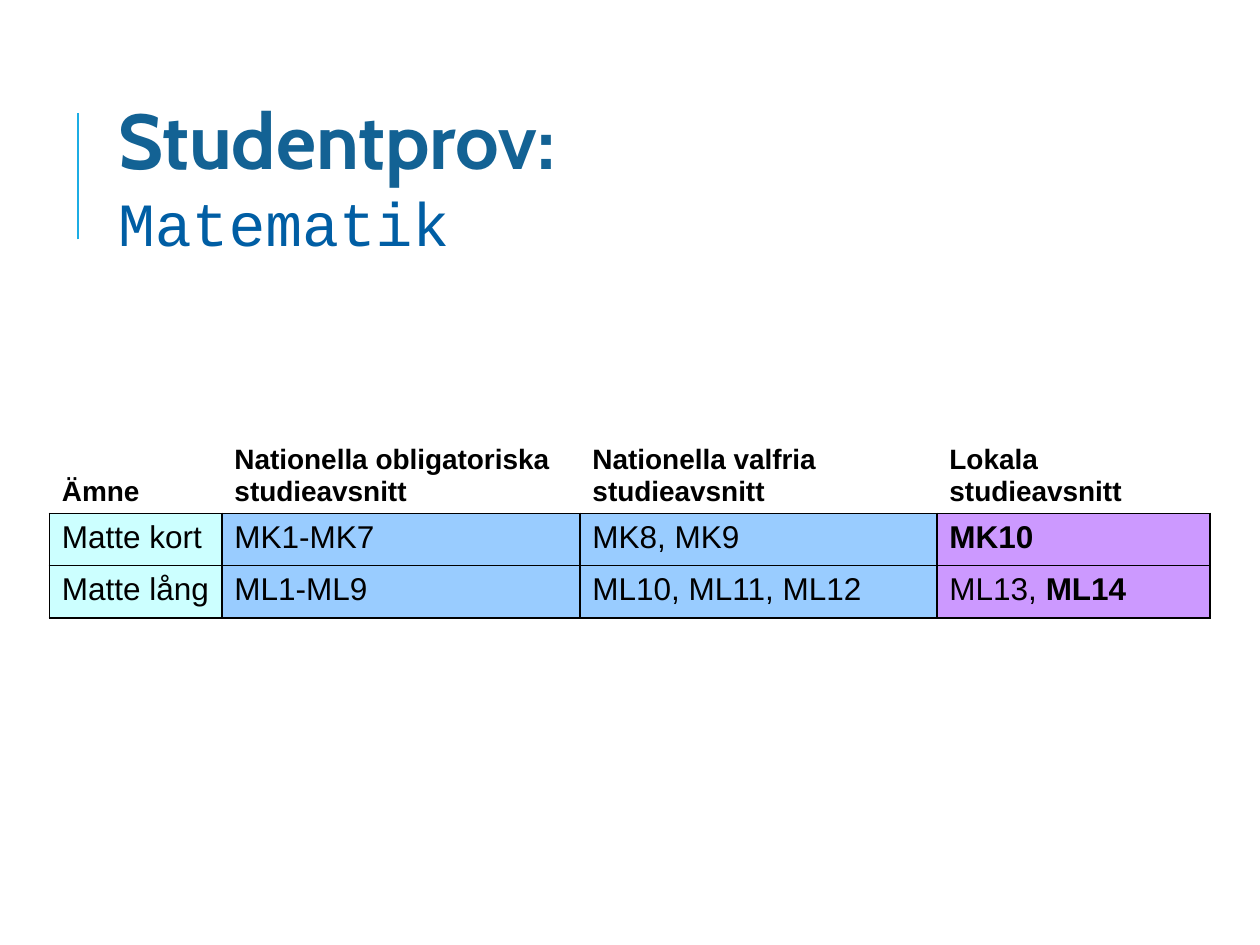
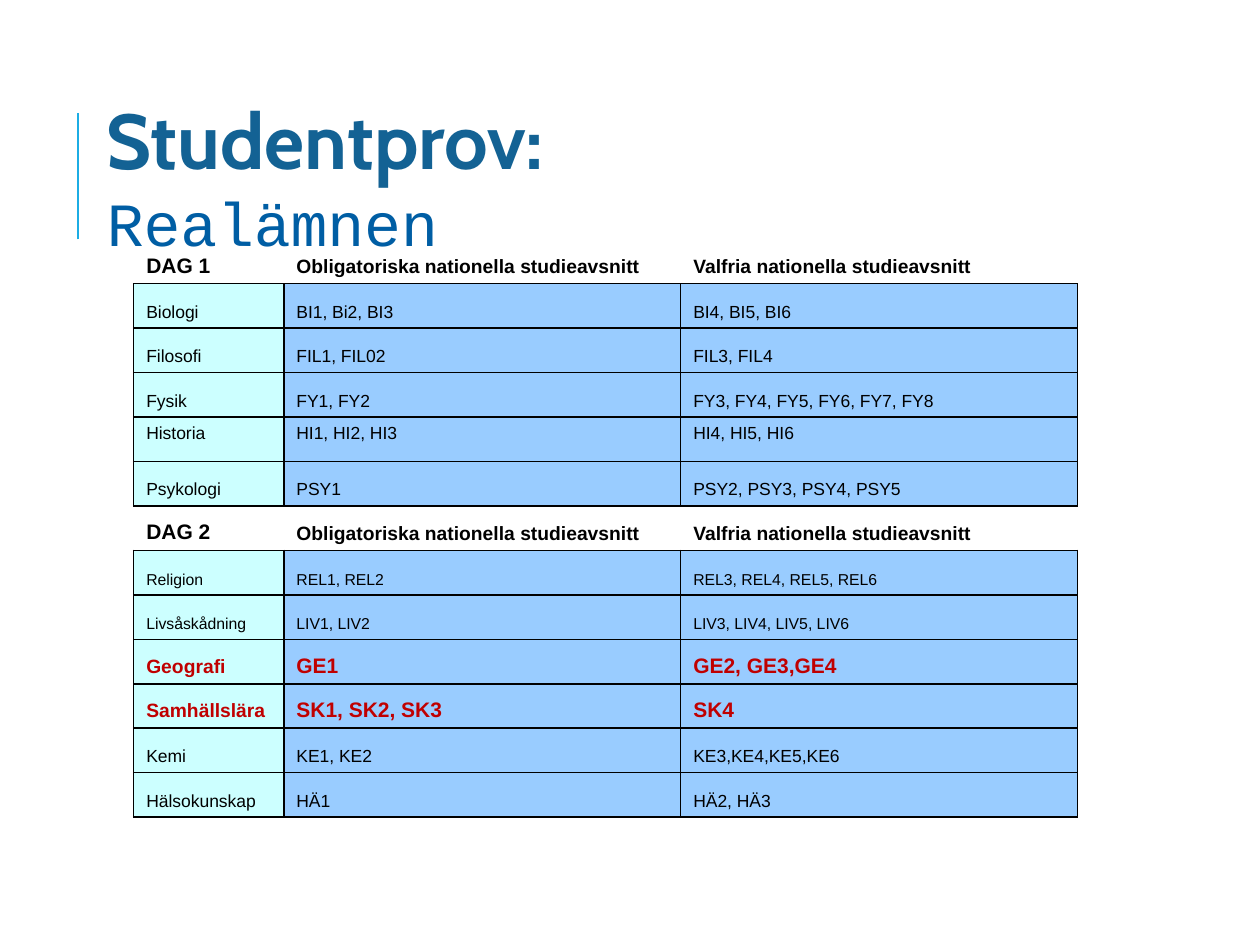
from dataclasses import dataclass

from lxml import etree
from pptx import Presentation
from pptx.dml.color import RGBColor
from pptx.enum.shapes import MSO_CONNECTOR
from pptx.enum.text import MSO_ANCHOR
from pptx.oxml.ns import qn
from pptx.util import Pt

TOP, MIDDLE, BOTTOM = MSO_ANCHOR.TOP, MSO_ANCHOR.MIDDLE, MSO_ANCHOR.BOTTOM
STRAIGHT = MSO_CONNECTOR.STRAIGHT

BLACK = RGBColor(0x00, 0x00, 0x00)
RED = RGBColor(0xC0, 0x00, 0x00)
ACCENT = RGBColor(0x1C, 0xAD, 0xE4)
TITLE_BLUE = RGBColor(0x13, 0x62, 0x94)
SUBTITLE_BLUE = RGBColor(0x00, 0x5E, 0xA4)
AQUA = RGBColor(0xCC, 0xFF, 0xFF)
SKY = RGBColor(0x99, 0xCC, 0xFF)
LILAC = RGBColor(0xCC, 0x99, 0xFF)


@dataclass
class RowStyle:
    """Look of one table row; label_size is the size in its first cell."""
    label_size: float
    size: float
    anchor: MSO_ANCHOR = BOTTOM
    bold: bool = False
    color: RGBColor = BLACK
    filled: bool = True
    borders: str = "LRTB"


MATH_HEADER = RowStyle(16, 16, bold=True, filled=False, borders="B")
MATH_ROW = RowStyle(18, 18, anchor=TOP)
DAY_1 = RowStyle(12, 11, bold=True, filled=False, borders="B")
DAY_2 = RowStyle(12, 11, bold=True, filled=False, borders="TB")
SUBJECT = RowStyle(10, 10)
SUBJECT_TOP = RowStyle(10, 10, anchor=TOP)
SUBJECT_SMALL = RowStyle(9, 9)
SUBJECT_RED = RowStyle(11, 12, bold=True, color=RED)

# Text between asterisks is bold.
MATH_ROWS = [
    (MATH_HEADER, "Ämne", "Nationella obligatoriska studieavsnitt",
     "Nationella valfria studieavsnitt", "Lokala studieavsnitt"),
    (MATH_ROW, "Matte kort", "MK1-MK7", "MK8, MK9", "*MK10*"),
    (MATH_ROW, "Matte lång", "ML1-ML9", "ML10, ML11, ML12", "ML13, *ML14*"),
]
DAY_HEADINGS = ("Obligatoriska nationella studieavsnitt",
                "Valfria nationella studieavsnitt")
SUBJECT_ROWS = [
    (DAY_1, "DAG 1", *DAY_HEADINGS),
    (SUBJECT, "Biologi", "BI1, Bi2, BI3", "BI4, BI5, BI6"),
    (SUBJECT, "Filosofi", "FIL1, FIL02", "FIL3, FIL4"),
    (SUBJECT, "Fysik", "FY1, FY2", "FY3, FY4, FY5, FY6, FY7, FY8"),
    (SUBJECT_TOP, "Historia", "HI1, HI2, HI3", "HI4, HI5, HI6"),
    (SUBJECT, "Psykologi", "PSY1", "PSY2, PSY3, PSY4, PSY5"),
    (DAY_2, "DAG 2", *DAY_HEADINGS),
    (SUBJECT_SMALL, "Religion", "REL1, REL2", "REL3, REL4, REL5, REL6"),
    (SUBJECT_SMALL, "Livsåskådning", "LIV1, LIV2", "LIV3, LIV4, LIV5, LIV6"),
    (SUBJECT_RED, "Geografi", "GE1", "GE2, GE3,GE4"),
    (SUBJECT_RED, "Samhällslära", "SK1, SK2, SK3", "SK4"),
    (SUBJECT, "Kemi", "KE1, KE2", "KE3,KE4,KE5,KE6"),
    (SUBJECT, "Hälsokunskap", "HÄ1", "HÄ2, HÄ3"),
]


def format_span(span, font, size, color, bold):
    span.font.name = font
    span.font.size = Pt(size)
    span.font.color.rgb = color
    span.font.bold = bold


def set_borders(cell, sides):
    """Draw black lines on the given sides (of L, R, T, B) and none elsewhere."""
    properties = cell._tc.get_or_add_tcPr()
    for side in "LRTB":
        line = etree.SubElement(properties, qn(f"a:ln{side}"), w=str(Pt(1)))
        if side in sides:
            fill = etree.SubElement(line, qn("a:solidFill"))
            etree.SubElement(fill, qn("a:srgbClr"), val=str(BLACK))
        else:
            etree.SubElement(line, qn("a:noFill"))


class ExamDeck:
    """Holds the shared style and the slide being built."""

    def __init__(self):
        self.deck = Presentation()
        self.deck.slide_width, self.deck.slide_height = Pt(720), Pt(540)
        self.page = None

    def add_page(self, subtitle, title_left):
        self.page = self.deck.slides.add_slide(self.deck.slide_layouts[6])
        self.add_rule()
        self.add_title(subtitle, title_left)

    def add_rule(self):
        rule = self.page.shapes.add_connector(
            STRAIGHT, Pt(44.64), Pt(136.8), Pt(44.64), Pt(64.8))
        rule.line.color.rgb = ACCENT
        rule.line.width = Pt(1.5)
        etree.SubElement(rule._element.spPr, qn("a:effectLst"))

    def add_title(self, subtitle, left):
        box = self.page.shapes.add_textbox(Pt(left), Pt(54.72), Pt(612), Pt(90.72))
        frame = box.text_frame
        frame.word_wrap = True
        frame.vertical_anchor = MIDDLE
        frame.text = f"Studentprov:\n{subtitle}"
        title, topic = frame.paragraphs
        format_span(title.runs[0], "Cabin", 44.4, TITLE_BLUE, True)
        format_span(topic.runs[0], "Courier New", 35.1, SUBTITLE_BLUE, False)

    def add_table(self, left, top, widths, heights, rows, fills):
        table = self.page.shapes.add_table(
            len(rows), len(widths), Pt(left), Pt(top),
            Pt(sum(widths)), Pt(sum(heights))).table
        table.first_row = table.horz_banding = False
        for column, width in zip(table.columns, widths):
            column.width = Pt(width)
        for row, height, (style, *texts) in zip(table.rows, heights, rows):
            row.height = Pt(height)
            for index, (cell, text) in enumerate(zip(row.cells, texts)):
                size = style.size if index else style.label_size
                self.fill_cell(cell, text, size, style, fills[index])

    def fill_cell(self, cell, text, size, style, fill):
        set_borders(cell, style.borders)
        if style.filled:
            cell.fill.solid()
            cell.fill.fore_color.rgb = fill
        else:
            cell.fill.background()
        cell.vertical_anchor = style.anchor
        para = cell.text_frame.paragraphs[0]
        for index, part in enumerate(text.split("*")):
            if part:
                span = para.add_run()
                span.text = part
                format_span(span, "Arial", size, style.color,
                            style.bold or index % 2 == 1)


def main():
    exam = ExamDeck()

    exam.add_page("Matematik", 60.48)
    exam.add_table(28.2, 247.68, [98.6, 204.6, 204, 156.2], [38.2, 29.9, 29.9],
                   MATH_ROWS, [AQUA, SKY, SKY, LILAC])

    exam.add_page("Realämnen", 54)
    exam.add_table(76.4, 128.16, [85.8, 226.8, 226.8], [34] + [25.4] * 12,
                   SUBJECT_ROWS, [AQUA, SKY, SKY])

    exam.deck.save("out.pptx")


if __name__ == "__main__":
    main()
